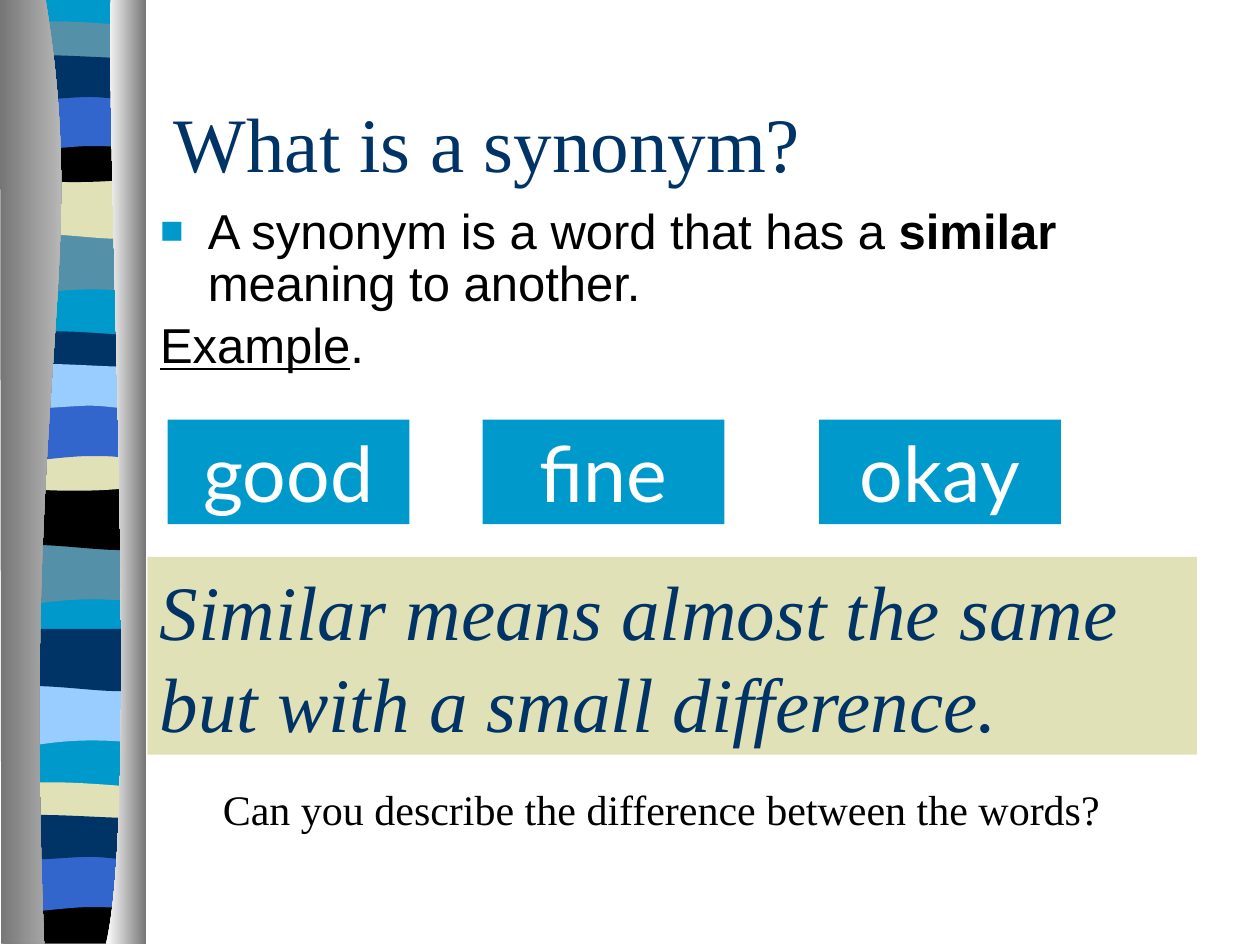
from lxml.etree import SubElement
from pptx import Presentation
from pptx.dml.color import RGBColor as RGB
from pptx.enum.shapes import MSO_SHAPE as Shape
from pptx.enum.text import MSO_ANCHOR as Anchor, MSO_AUTO_SIZE as Fit, PP_ALIGN as Align
from pptx.oxml.ns import qn
from pptx.util import Inches, Pt

NAVY = RGB(0x00, 0x33, 0x66)
TEAL = RGB(0x00, 0x99, 0xCC)
STEEL = RGB(0x54, 0x90, 0xA8)
SAND = RGB(0xE1, 0xE1, 0xB7)
BLUE = RGB(0x33, 0x66, 0xCC)
SKY = RGB(0x99, 0xCC, 0xFF)
BLACK = RGB(0x00, 0x00, 0x00)
WHITE = RGB(0xFF, 0xFF, 0xFF)
GREY = RGB(0x76, 0x76, 0x76)
LIGHT = RGB(0xD8, 0xD8, 0xD8)
SERIF, SANS, ROUND = "Times New Roman", "Arial", "Lato"

# Each outline is a start point, then lines (one point) and curves (three
# points). Band heights are measured from the top of the band.
LEFT, RIGHT = 0.05, 1.13
BANDS = {
    "dip": [(RIGHT, 0), [(RIGHT, 0), (RIGHT, 0.47), (RIGHT, 0.47)],
            [(0.38, 0.39), (0.23, 0.55), (LEFT, 0.47)], [(LEFT, 0)]],
    "swell": [(RIGHT, 0), [(RIGHT, 0.47)],
              [(0.95, 0.55), (0.38, 0.41), (LEFT, 0.47)], [(LEFT, 0)]],
    "slim": [(RIGHT, 0.05), [(RIGHT, 0.29)],
             [(0.95, 0.33), (0.23, 0.33), (LEFT, 0.29)], [(LEFT, 0.05)],
             [(0.12, 0), (0.28, 0.01), (0.46, 0.01)],
             [(0.64, 0.01), (0.99, 0.04), (RIGHT, 0.05)]],
    "sag": [(RIGHT, 0), [(RIGHT, 0.32)],
            [(0.95, 0.38), (0.23, 0.38), (LEFT, 0.32)], [(LEFT, 0)],
            [(0.71, 0.05), (0.9, 0), (RIGHT, 0)]],
    "arch": [(RIGHT, 0), [(RIGHT, 0), (RIGHT, 0.47), (RIGHT, 0.47)],
             [(0.96, 0.42), (0.89, 0.42), (0.71, 0.42)],
             [(0.53, 0.42), (0.21, 0.47), (LEFT, 0.47)], [(LEFT, 0)]],
    "wave": [(RIGHT, 0.05), [(RIGHT, 0.36)],
             [(1.06, 0.41), (0.89, 0.36), (0.71, 0.36)],
             [(0.53, 0.36), (0.16, 0.41), (LEFT, 0.36)], [(LEFT, 0.05)],
             [(0.2, 0), (0.78, 0.05), (0.96, 0.05)],
             [(1.14, 0.05), (1.1, 0.05), (RIGHT, 0.05)]],
    "foot": [(RIGHT, 0), [(RIGHT, 0.37)], [(LEFT, 0.37)], [(LEFT, 0)],
             [(0.71, 0.05), (0.9, 0), (RIGHT, 0)]],
}
STRIPES = [
    ("dip", 1.85, STEEL), ("swell", 1.4, SAND), ("slim", 0.16, STEEL),
    ("sag", 1.08, BLACK), ("arch", 0.74, BLUE), ("wave", 0.41, NAVY),
    ("dip", 4.31, STEEL), ("swell", 3.87, BLACK), ("slim", 2.62, NAVY),
    ("sag", 3.53, SAND), ("arch", 3.2, BLUE), ("wave", 2.86, SKY),
    ("dip", 5.43, SKY), ("swell", 4.99, NAVY), ("slim", 6.2, SAND),
    ("foot", 7.12, BLACK), ("arch", 6.78, BLUE), ("wave", 6.44, NAVY),
]
BASE = [(1.14, -0.01), [(1.14, 7.47)], [(0.06, 7.47)], [(0.06, -0.01)]]
EDGES = [
    ([(0.36, -0.01), [(0.72, 2.16), (0.17, 2.96), (0.35, 7.49)],
      [(0.01, 7.49)], [(0, -0.01)]], GREY, LIGHT),
    ([(0.88, -0.01), [(0.84, 1.25), (1.11, 6.46), (0.84, 7.49)],
      [(1.16, 7.49)], [(1.16, 0)]], WHITE, GREY),
]


def trace(slide, outline, top=0):
    """Draw an outline of lines and curves as one closed shape."""
    start, *parts = outline
    spots = [(Inches(x), Inches(y + top)) for part in parts for x, y in part]
    pen = slide.shapes.build_freeform(Inches(start[0]), Inches(start[1] + top))
    pen.add_line_segments(spots, close=True)
    shape = plain(pen.convert_to_shape())
    steps = iter(list(shape._element.iter(qn("a:lnTo"))))
    for part in parts:
        group = [next(steps) for _ in part]
        if len(group) == 3:
            bend_lines(group)
    return shape


def bend_lines(lines):
    """Turn three line steps into one cubic curve through their points."""
    owner = lines[0].getparent()
    bend = SubElement(owner, qn("a:cubicBezTo"))
    owner.insert(owner.index(lines[0]), bend)
    for line in lines:
        bend.append(line[0])
        owner.remove(line)


def plain(shape):
    shape.shadow.inherit = False
    shape.line.fill.background()
    return shape


def paint(shape, color):
    shape.fill.solid()
    shape.fill.fore_color.rgb = color


def shade(shape, *colors):
    shape.fill.gradient()
    shape.fill.gradient_angle = 0
    for stop, color in zip(shape.fill.gradient_stops, colors):
        stop.color.rgb = color


def style(para, face, size, color, align=Align.LEFT):
    para.alignment = align
    para.font.name, para.font.size = face, Pt(size)
    para.font.color.rgb = color


def place(shape, left, top, width, height):
    shape.left, shape.top = Inches(left), Inches(top)
    shape.width, shape.height = Inches(width), Inches(height)
    shape.text_frame.auto_size = Fit.NONE


def write(shape, text, *look):
    frame = shape.text_frame
    frame.word_wrap = True
    frame.auto_size = Fit.SHAPE_TO_FIT_TEXT
    frame.vertical_anchor = Anchor.TOP
    para = frame.paragraphs[0]
    para.text = text
    style(para, *look)
    return para


def add_box(slide, text, area, fill, *look):
    box = plain(slide.shapes.add_shape(Shape.RECTANGLE, *map(Inches, area)))
    paint(box, fill)
    return write(box, text, *look)


def add_strip(slide):
    paint(trace(slide, BASE), TEAL)
    for kind, top, color in STRIPES:
        paint(trace(slide, BANDS[kind], top), color)
    for outline, first, last in EDGES:
        shade(trace(slide, outline), first, last)


def set_bullet(para, mark=None):
    props = para._p.get_or_add_pPr()
    props.set("marL", str(Inches(0.38)))
    props.set("indent", str(-Inches(0.38)))
    if not mark:
        SubElement(props, qn("a:buNone"))
        return
    tint = SubElement(props, qn("a:buClr"))
    SubElement(tint, qn("a:srgbClr"), val=str(TEAL))
    SubElement(props, qn("a:buSzPct"), val="80000")
    SubElement(props, qn("a:buFont"), typeface=SANS)
    SubElement(props, qn("a:buChar"), char=mark)


def fill_title(title):
    place(title, 1.28, 0.5, 8.5, 1.25)
    title.text_frame.vertical_anchor = Anchor.MIDDLE
    title.text_frame.text = "What is a synonym?"
    style(title.text_frame.paragraphs[0], SERIF, 44, NAVY)


def add_run(para, text):
    run = para.add_run()
    run.text = text
    return run.font


def fill_body(body):
    place(body, 1.17, 1.59, 8.5, 1.58)
    frame = body.text_frame
    rule, label = frame.paragraphs[0], frame.add_paragraph()
    for para, mark in ((rule, "■"), (label, None)):
        style(para, SANS, 28, BLACK)
        para.line_spacing, para.space_before = 0.9, Pt(5)
        set_bullet(para, mark)
    add_run(rule, "A synonym is a word that has a ")
    add_run(rule, "similar").bold = True
    add_run(rule, " meaning to another.")
    add_run(label, "Example").underline = True
    add_run(label, ".")


def add_question(slide):
    box = slide.shapes.add_textbox(*map(Inches, (1.67, 6.17, 7.67, 0.5)))
    write(box, "Can you describe the difference between the words?", SERIF, 24, BLACK)


def main():
    deck = Presentation()
    deck.slide_width, deck.slide_height = Inches(10), Inches(7.5)
    slide = deck.slides.add_slide(deck.slide_layouts[1])
    add_strip(slide)
    fill_title(slide.shapes.title)
    fill_body(slide.placeholders[1])
    for word, left in (("good", 1.33), ("fine", 3.83), ("okay", 6.5)):
        add_box(slide, word, (left, 3.33, 1.92, 0.83), TEAL, ROUND, 44, WHITE, Align.CENTER)
    note = add_box(slide, "Similar means almost the same but with a small difference.",
                   (1.17, 4.42, 8.33, 1.57), SAND, SERIF, 44, NAVY)
    note.font.italic = True
    add_question(slide)
    deck.save("out.pptx")


if __name__ == "__main__":
    main()
